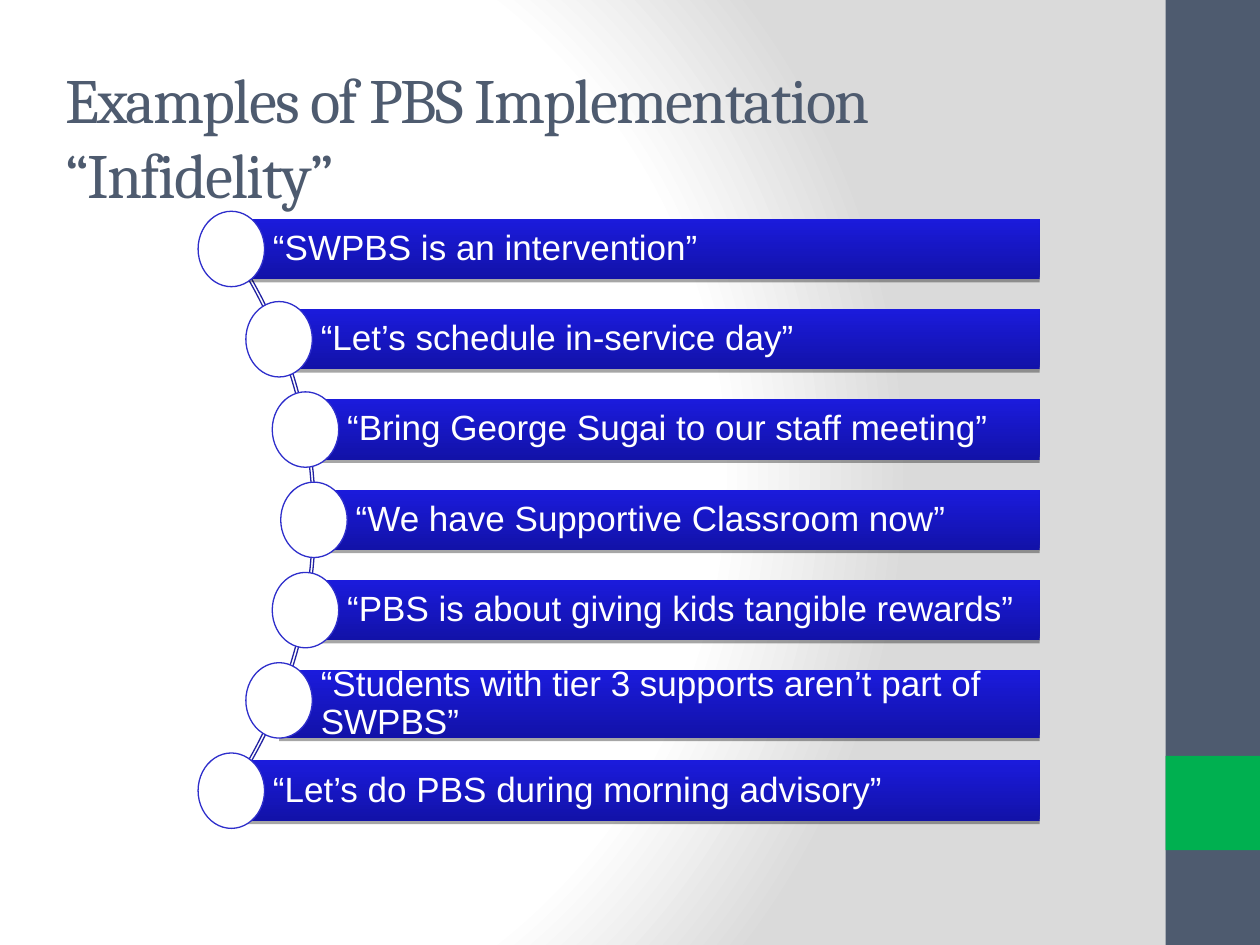
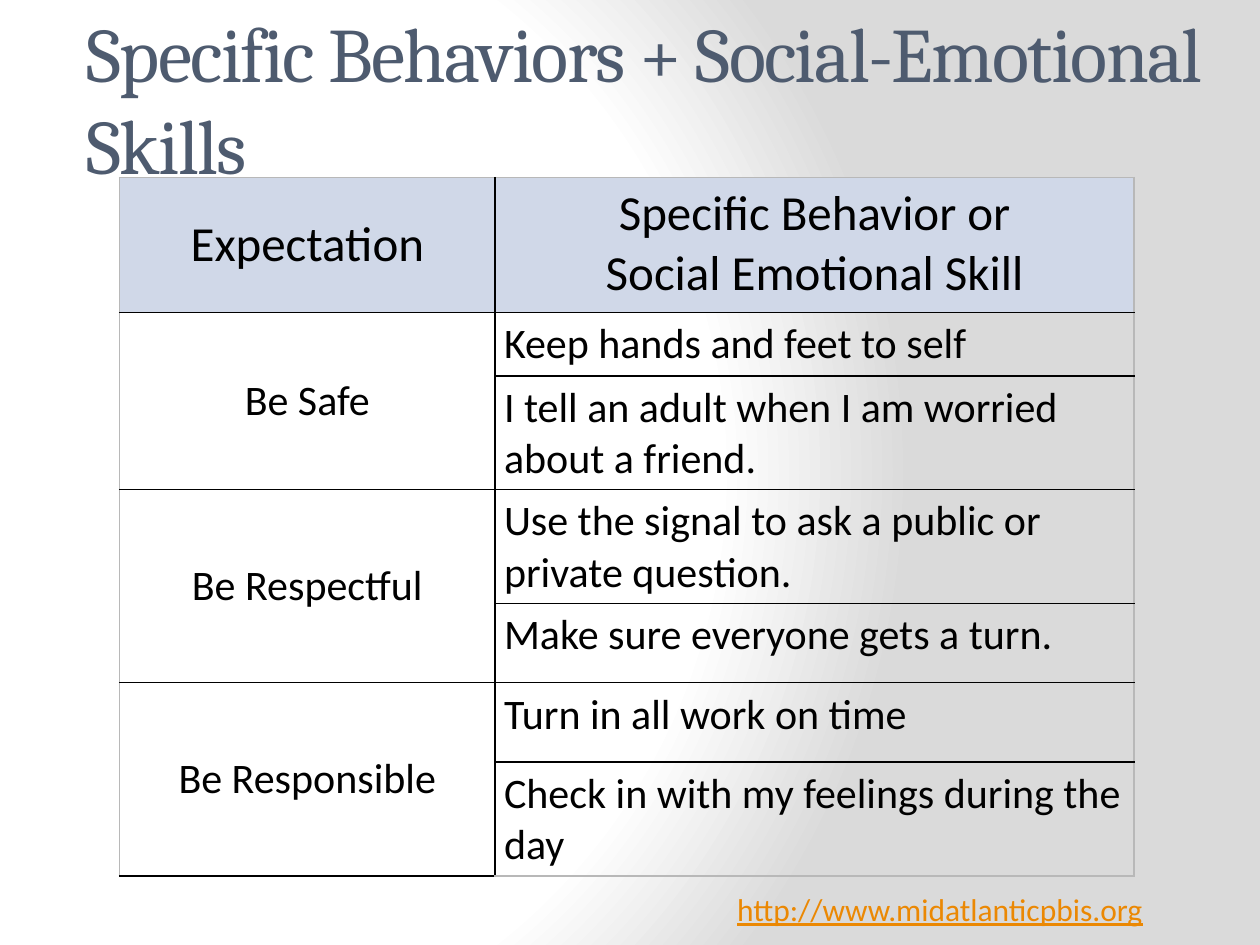
from math import asin, cos, sin, sqrt

from lxml import etree
from pptx import Presentation
from pptx.dml.color import RGBColor
from pptx.enum.shapes import MSO_SHAPE
from pptx.enum.text import MSO_ANCHOR, PP_ALIGN
from pptx.oxml import parse_xml
from pptx.oxml.ns import nsdecls, qn
from pptx.util import Cm, Pt

RECTANGLE, OVAL = MSO_SHAPE.RECTANGLE, MSO_SHAPE.OVAL
MIDDLE, TOP = MSO_ANCHOR.MIDDLE, MSO_ANCHOR.TOP
LEFT, CENTER = PP_ALIGN.LEFT, PP_ALIGN.CENTER

WHITE = RGBColor(0xFF, 0xFF, 0xFF)
BLACK = RGBColor(0x00, 0x00, 0x00)
PALE_GREY = RGBColor(0xDA, 0xDA, 0xDA)
EDGE_GREY = RGBColor(0xB8, 0xB8, 0xB8)
SLATE = RGBColor(0x4E, 0x5B, 0x6F)
GREEN = RGBColor(0x00, 0xB0, 0x50)
BAR_DARK = RGBColor(0x12, 0x12, 0xA8)
BAR_BRIGHT = RGBColor(0x1B, 0x1B, 0xDC)
DISC_LINE = RGBColor(0x2E, 0x2E, 0xCB)
ARC_LINE = RGBColor(0x22, 0x22, 0xA2)
HEADER_BLUE = RGBColor(0xD0, 0xD8, 0xE8)
LINK_ORANGE = RGBColor(0xEB, 0x88, 0x03)

PAGE_WIDTH, PAGE_HEIGHT = 25.4, 19.05
BAND_LEFT = 23.5

INFIDELITY_TITLE = "Examples of PBS Implementation “Infidelity”"
MISCONCEPTIONS = [
    "“SWPBS is an intervention”",
    "“Let’s schedule in-service day”",
    "“Bring George Sugai to our staff meeting”",
    "“We have Supportive Classroom now”",
    "“PBS is about giving kids tangible rewards”",
    "“Students with tier 3 supports aren’t part of SWPBS”",
    "“Let’s do PBS during morning advisory”",
]
TWO_LINE_LENGTH = 45

SKILLS_TITLE = "Specific Behaviors + Social-Emotional Skills"
TABLE_HEADER = ["Expectation", "Specific Behavior or\nSocial Emotional Skill"]
EXPECTATIONS = [
    ("Be Safe", ["Keep hands and feet to self",
                 "I tell an adult when I am worried about a friend."]),
    ("Be Respectful", ["Use the signal to ask a public or private question.",
                       "Make sure everyone gets a turn."]),
    ("Be Responsible", ["Turn in all work on time",
                        "Check in with my feelings during the day"]),
]
COLUMN_WIDTHS = [7.57, 12.88]
ROW_HEIGHTS = [2.72, 1.24, 1.75, 1.98, 1.6, 1.6, 1.6]
WEB_ADDRESS = "http://www.midatlanticpbis.org"

ARC_CENTER_X, ARC_CENTER_Y, ARC_RADIUS = -3.45, 10.48, 9.78
ARC_GAP, ARC_STEPS = 0.06, 60
ROW_STEP = 1.82
BAR_RIGHT, BAR_HEIGHT, TALL_BAR_HEIGHT = 20.96, 1.22, 1.37
DISC_WIDTH, DISC_HEIGHT = 1.34, 1.52


def new_page(deck):
    page = deck.slides.add_slide(deck.slide_layouts[6])
    stops = "".join(
        f'<a:gs pos="{position}"><a:srgbClr val="{color}"/></a:gs>'
        for position, color in [(0, WHITE), (75000, WHITE), (100000, PALE_GREY)])
    page.element.cSld.insert(0, parse_xml(
        f'<p:bg {nsdecls("p", "a")}><p:bgPr><a:gradFill rotWithShape="1">'
        f'<a:gsLst>{stops}</a:gsLst><a:path path="circle">'
        '<a:fillToRect l="20000" t="50000" r="100000" b="50000"/></a:path>'
        '</a:gradFill><a:effectLst/></p:bgPr></p:bg>'))
    return page


def set_font(para, name, size, color):
    para.font.name = name
    para.font.size = Pt(size)
    para.font.color.rgb = color


def add_text(page, text, place, name, size, color, anchor):
    box = page.shapes.add_textbox(*map(Cm, place))
    frame = box.text_frame
    frame.word_wrap = True
    frame.vertical_anchor = anchor
    frame.text = text
    para = frame.paragraphs[0]
    set_font(para, name, size, color)
    return para


def add_title(page, text, place, size):
    para = add_text(page, text, place, "Cambria", size, SLATE, MIDDLE)
    para.runs[0].font._element.set("spc", "-100")


def add_plain_shape(page, kind, place, fill, line=None):
    shape = page.shapes.add_shape(kind, *map(Cm, place))
    shape.shadow.inherit = False
    if fill:
        shape.fill.solid()
        shape.fill.fore_color.rgb = fill
    if line:
        shape.line.color.rgb = line
        shape.line.width = Pt(0.75)
    else:
        shape.line.fill.background()
    return shape


def add_side_band(page):
    width = PAGE_WIDTH - BAND_LEFT
    add_plain_shape(page, RECTANGLE, (BAND_LEFT, 0, width, PAGE_HEIGHT), SLATE)
    add_plain_shape(page, RECTANGLE, (BAND_LEFT, 15.24, width, width), GREEN)


def add_arc(page, reach):
    limit = asin(reach / ARC_RADIUS)
    angles = [limit * (2 * step / ARC_STEPS - 1) for step in range(ARC_STEPS + 1)]
    outline = [
        (Cm(ARC_CENTER_X + radius * cos(angle)), Cm(ARC_CENTER_Y + radius * sin(angle)))
        for radius, sweep in [(ARC_RADIUS + ARC_GAP / 2, angles),
                              (ARC_RADIUS - ARC_GAP / 2, angles[::-1])]
        for angle in sweep]
    builder = page.shapes.build_freeform(*outline[0], scale=1.0)
    builder.add_line_segments(outline[1:], close=True)
    arc = builder.convert_to_shape()
    arc.shadow.inherit = False
    arc.fill.background()
    arc.line.color.rgb = ARC_LINE
    arc.line.width = Pt(0.75)


def add_bar(page, text, left, top):
    height = TALL_BAR_HEIGHT if len(text) > TWO_LINE_LENGTH else BAR_HEIGHT
    bar = add_plain_shape(page, RECTANGLE, (left, top, BAR_RIGHT - left, height), None)
    bar.fill.gradient()
    bar.fill.gradient_angle = 90
    for stop, color in zip(bar.fill.gradient_stops, (BAR_DARK, BAR_BRIGHT)):
        stop.color.rgb = color
    effects = bar._element.spPr.find(qn("a:effectLst"))
    effects.append(parse_xml(
        f'<a:outerShdw {nsdecls("a")} blurRad="0" dist="{Pt(1.8)}" dir="5400000" '
        f'rotWithShape="0"><a:srgbClr val="{BLACK}"><a:alpha val="35000"/>'
        '</a:srgbClr></a:outerShdw>'))
    frame = bar.text_frame
    frame.word_wrap = True
    frame.vertical_anchor = MIDDLE
    frame.margin_left = Cm(0.84)
    frame.margin_right = frame.margin_top = frame.margin_bottom = Cm(0.13)
    frame.text = text
    para = frame.paragraphs[0]
    para.alignment = LEFT
    para.line_spacing = 0.9
    para.space_after = Pt(7.5)
    set_font(para, "Arial", 20, WHITE)


def build_infidelity_page(deck):
    page = new_page(deck)
    add_side_band(page)
    add_title(page, INFIDELITY_TITLE, (1.07, 0.84, 19.74, 3.8), 36)
    middle = (len(MISCONCEPTIONS) - 1) / 2
    add_arc(page, middle * ROW_STEP)
    for index, text in enumerate(MISCONCEPTIONS):
        offset = (index - middle) * ROW_STEP
        center_x = ARC_CENTER_X + sqrt(ARC_RADIUS ** 2 - offset ** 2)
        center_y = ARC_CENTER_Y + offset
        add_bar(page, text, center_x, center_y - BAR_HEIGHT / 2)
        add_plain_shape(page, OVAL, (center_x - DISC_WIDTH / 2, center_y - DISC_HEIGHT / 2,
                                     DISC_WIDTH, DISC_HEIGHT), WHITE, DISC_LINE)


def set_borders(cell, colors):
    properties = cell._tc.get_or_add_tcPr()
    for side, color in zip("LRTB", colors):
        line = etree.SubElement(properties, qn(f"a:ln{side}"), w=str(Pt(1)))
        fill = etree.SubElement(line, qn("a:solidFill"))
        etree.SubElement(fill, qn("a:srgbClr"), val=str(color))


def fill_cell(cell, text, size, alignment, anchor):
    cell.text = text
    cell.vertical_anchor = anchor
    for para in cell.text_frame.paragraphs:
        para.alignment = alignment
        set_font(para, "Calibri", size, BLACK)


def add_skills_table(page):
    last_row, last_column = len(ROW_HEIGHTS) - 1, len(COLUMN_WIDTHS) - 1
    holder = page.shapes.add_table(len(ROW_HEIGHTS), len(COLUMN_WIDTHS),
                                   Cm(2.41), Cm(3.58), Cm(sum(COLUMN_WIDTHS)), Cm(14.07))
    table = holder.table
    table.first_row = table.horz_banding = False
    for column, width in zip(table.columns, COLUMN_WIDTHS):
        column.width = Cm(width)
    for row, height in zip(table.rows, ROW_HEIGHTS):
        row.height = Cm(height)
    for row in range(last_row + 1):
        for column in range(last_column + 1):
            cell = table.cell(row, column)
            edges = (column == 0, column == last_column, row == 0, row == last_row)
            set_borders(cell, [EDGE_GREY if edge else BLACK for edge in edges])
            cell.margin_left = cell.margin_right = Cm(0.18)
            cell.margin_top = cell.margin_bottom = Cm(0.13)
            if row == 0:
                cell.fill.solid()
                cell.fill.fore_color.rgb = HEADER_BLUE
            else:
                cell.fill.background()
    for column, (text, anchor) in enumerate(zip(TABLE_HEADER, (MIDDLE, TOP))):
        fill_cell(table.cell(0, column), text, 28, CENTER, anchor)
    row = 1
    for expectation, skills in EXPECTATIONS:
        label = table.cell(row, 0)
        label.merge(table.cell(row + len(skills) - 1, 0))
        fill_cell(label, expectation, 24, CENTER, MIDDLE)
        for skill in skills:
            fill_cell(table.cell(row, 1), skill, 24, LEFT, TOP)
            row += 1


def build_skills_page(deck):
    page = new_page(deck)
    add_title(page, SKILLS_TITLE, (1.5, 0.38, 23.9, 3.18), 44)
    add_skills_table(page)
    link = add_text(page, WEB_ADDRESS, (14.61, 17.81, 10.79, 1.02),
                    "Calibri", 18, LINK_ORANGE, TOP)
    link.font.underline = True


def main():
    deck = Presentation()
    deck.slide_width, deck.slide_height = Cm(PAGE_WIDTH), Cm(PAGE_HEIGHT)
    build_infidelity_page(deck)
    build_skills_page(deck)
    deck.save("out.pptx")


if __name__ == "__main__":
    main()
